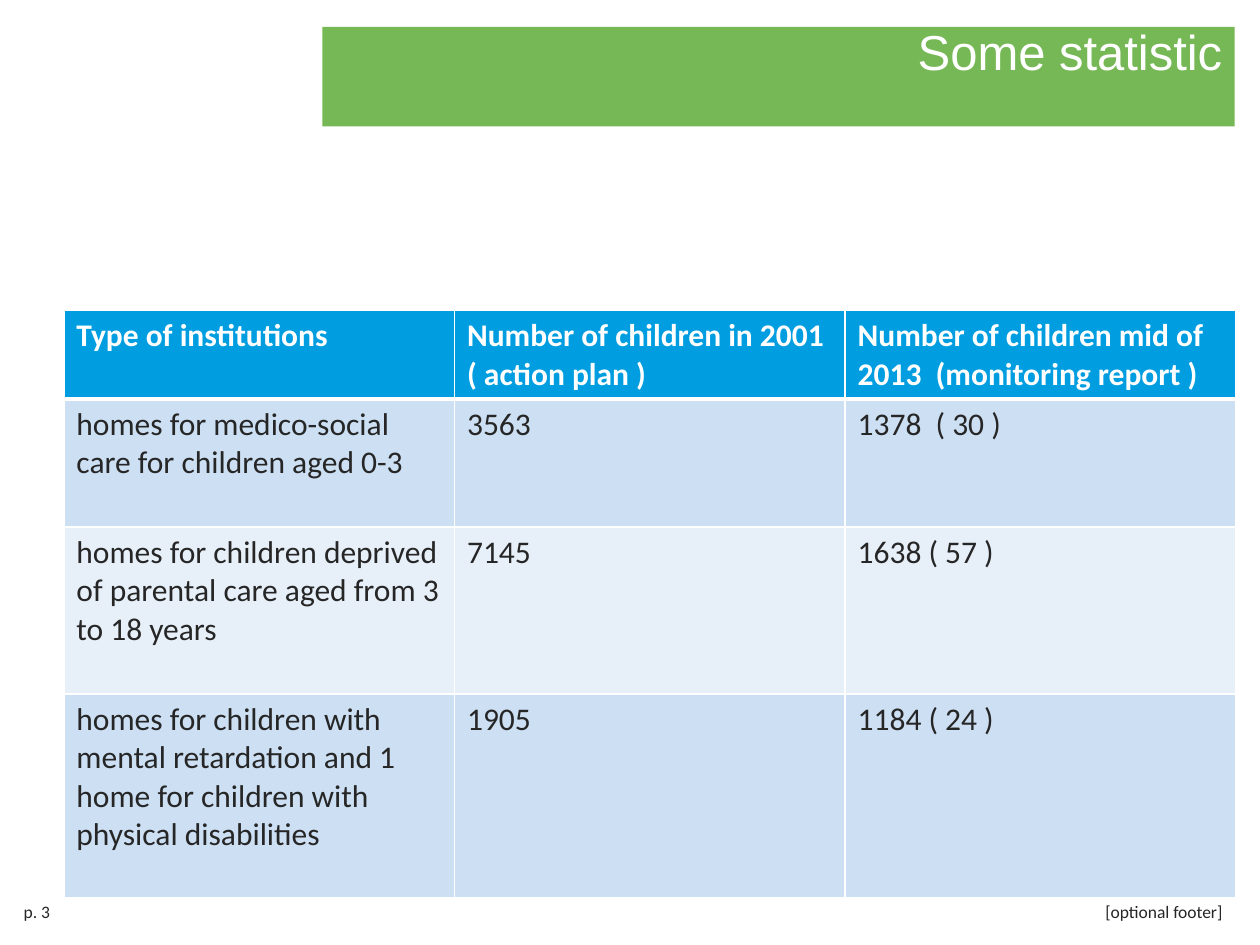
from typing import NamedTuple

from lxml.etree import SubElement
from pptx import Presentation
from pptx.dml.color import RGBColor
from pptx.enum.shapes import MSO_SHAPE as Shape
from pptx.enum.text import MSO_ANCHOR as Anchor, MSO_AUTO_SIZE as AutoSize, PP_ALIGN as Align
from pptx.oxml.ns import qn
from pptx.util import Pt

WHITE, INK = "FFFFFF", "262626"
GREEN, BLUE = "76B856", "009EE0"
BANDS = ("CCDFF3", "E7F0F9")
BAND_LEFT, BAND_TOP, BAND_WIDTH, BAND_HEIGHT = 184.3, 15.3, 521.3, 57
COLUMN_WIDTH = 223.2


class TableRow(NamedTuple):
    height: float
    texts: tuple[str, str, str]


class FooterNote(NamedTuple):
    text: str
    left: float
    width: float
    align: Align


ROWS = (
    TableRow(50.4, ("Type of institutions",
                    "Number of children in 2001 ( action plan )",
                    "Number of children mid of 2013  (monitoring report )")),
    TableRow(73.2, ("homes for medico-social care for children aged 0-3",
                    "3563", "1378  ( 30 )")),
    TableRow(95.4, ("homes for children deprived of parental care aged from 3 to 18 years",
                    "7145", "1638 ( 57 )")),
    TableRow(116.6, ("homes for children with mental retardation and 1 home for children "
                     "with physical disabilities", "1905", "1184 ( 24 )")),
)
FOOTER_NOTES = (
    FooterNote("p. 3", 6.5, 50.4, Align.LEFT),
    FooterNote("[optional footer]", 362.2, 343.4, Align.RIGHT),
)


def rgb(value: str) -> RGBColor:
    return RGBColor.from_string(value)


def style(paragraph, size: float, color: str, name: str = "Calibri", bold: bool = False) -> None:
    font = paragraph.font
    font.size, font.name, font.bold = Pt(size), name, bold
    font.color.rgb = rgb(color)


def add_borders(cell, bottom: float) -> None:
    """Draw white cell borders, one point wide except at the bottom."""
    properties = cell._tc.get_or_add_tcPr()
    widths = {"a:lnL": 1, "a:lnR": 1, "a:lnT": 1, "a:lnB": bottom}
    for tag, width in widths.items():
        line = SubElement(properties, qn(tag), w=str(Pt(width)))
        fill = SubElement(line, qn("a:solidFill"))
        SubElement(fill, qn("a:srgbClr"), val=WHITE)


def add_title(slide, text: str) -> None:
    band = slide.shapes.add_shape(Shape.RECTANGLE, Pt(BAND_LEFT), Pt(BAND_TOP),
                                  Pt(BAND_WIDTH), Pt(BAND_HEIGHT))
    band.shadow.inherit = False
    band.fill.solid()
    band.fill.fore_color.rgb = rgb(GREEN)
    band.line.fill.background()

    title = slide.shapes.title
    slide.shapes._spTree.append(title._element)  # in front of the band
    title.left, title.top = Pt(BAND_LEFT), Pt(BAND_TOP + 2)
    title.width, title.height = Pt(BAND_WIDTH), Pt(BAND_HEIGHT)
    frame = title.text_frame
    frame.text = text
    frame.auto_size = AutoSize.NONE
    frame.vertical_anchor = Anchor.TOP
    frame.margin_top = Pt(3)
    heading = frame.paragraphs[0]
    heading.alignment = Align.RIGHT
    heading.line_spacing = Pt(25.6)
    style(heading, 28, WHITE, "Arial")


def add_footer_note(slide, note: FooterNote) -> None:
    box = slide.shapes.add_textbox(Pt(note.left), Pt(511.2), Pt(note.width), Pt(19.4))
    frame = box.text_frame
    frame.word_wrap = True
    frame.text = note.text
    frame.paragraphs[0].alignment = note.align
    style(frame.paragraphs[0], 10, INK)


def add_statistics(slide) -> None:
    columns = len(ROWS[0].texts)
    table = slide.shapes.add_table(len(ROWS), columns, Pt(36.5), Pt(177.5),
                                   Pt(COLUMN_WIDTH * columns),
                                   Pt(sum(row.height for row in ROWS))).table
    for column in table.columns:
        column.width = Pt(COLUMN_WIDTH)
    for index, row in enumerate(ROWS):
        table.rows[index].height = Pt(row.height)
        header = index == 0
        for cell, text in zip(table.rows[index].cells, row.texts):
            cell.text = text
            style(cell.text_frame.paragraphs[0], 18, WHITE if header else INK, bold=header)
            add_borders(cell, bottom=3 if header else 1)
            cell.fill.solid()
            cell.fill.fore_color.rgb = rgb(BLUE if header else BANDS[(index - 1) % 2])


def main() -> None:
    deck = Presentation()
    deck.slide_width, deck.slide_height = Pt(720), Pt(540)
    slide = deck.slides.add_slide(deck.slide_layouts[5])
    add_title(slide, "Some statistic")
    for note in FOOTER_NOTES:
        add_footer_note(slide, note)
    add_statistics(slide)
    deck.save("out.pptx")


if __name__ == "__main__":
    main()
